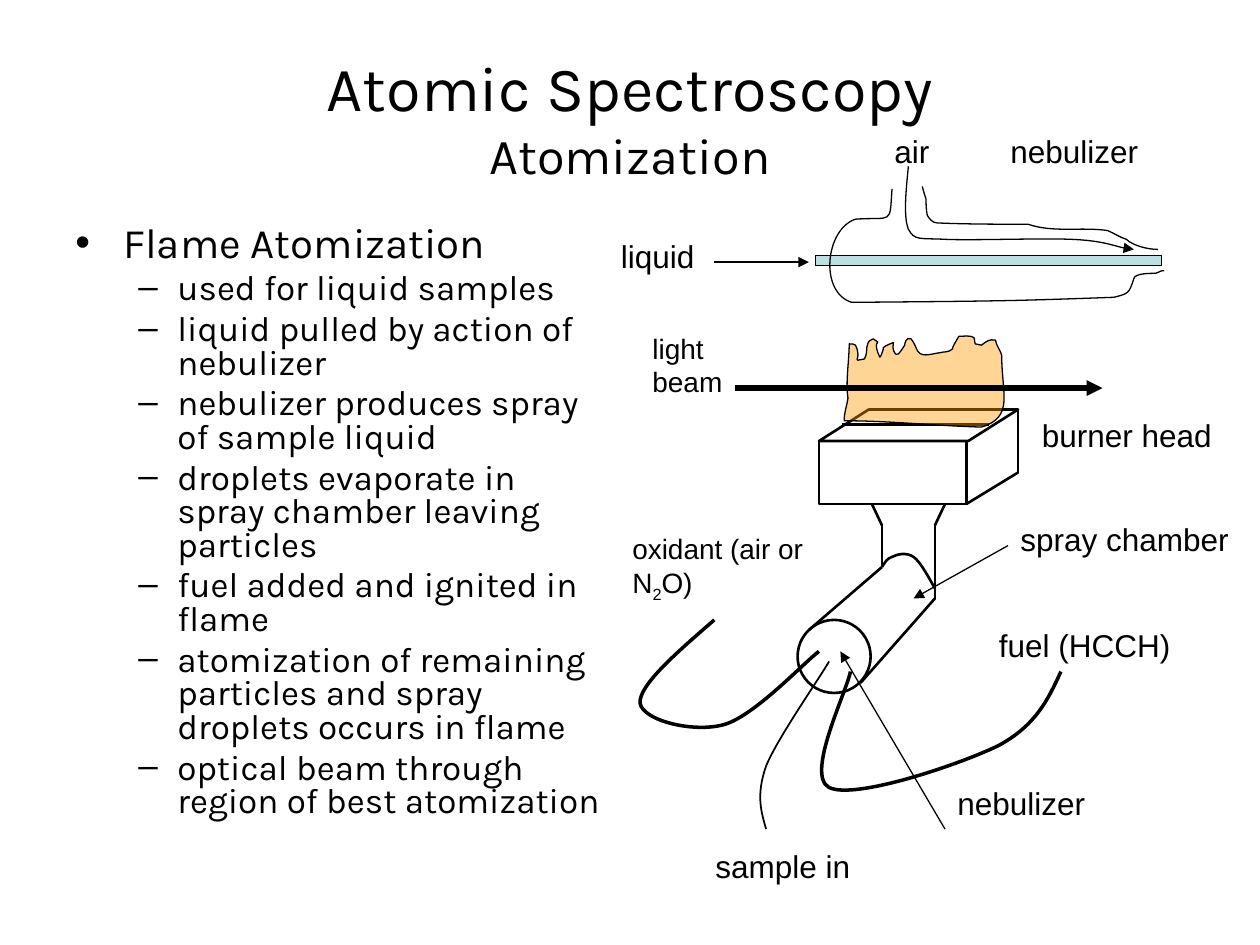
from dataclasses import dataclass

from lxml import etree
from pptx import Presentation
from pptx import util as u
from pptx.dml.color import RGBColor
from pptx.enum import shapes, text
from pptx.oxml.ns import qn


@dataclass(frozen=True)
class Theme:
    ink: RGBColor = RGBColor(0, 0, 0)
    liquid: RGBColor = RGBColor(0xBB, 0xE0, 0xE3)
    flame: RGBColor = RGBColor(0xFF, 0x99, 0x00)
    flame_alpha: int = 41
    heading_font: str = "Karla"
    label_font: str = "Arial"
    title: float = 36
    subtitle: float = 28.8
    bullet: float = 24
    sub_bullet: float = 20
    label: float = 18
    small_label: float = 16
    thin: float = 0.75
    outline: float = 1.5
    hose: float = 2
    beam: float = 3


@dataclass(frozen=True)
class Label:
    words: str
    x: float
    y: float
    w: float
    h: float = 0.4
    size: float = Theme.label


@dataclass(frozen=True)
class Line:
    x1: float
    y1: float
    x2: float
    y2: float
    width: float = Theme.outline
    arrow: bool = False


@dataclass(frozen=True)
class Curve:
    """Bezier chain: a start point, then three points per segment."""
    points: list
    width: float = Theme.thin
    arrow: bool = False
    closed: bool = False


T = Theme()
RECT = shapes.MSO_SHAPE.RECTANGLE


def cm(inches: float) -> u.Length:
    """Diagram units are inches; lengths are handed over as centimetres."""
    return u.Cm(inches * 2.54)


def box(*values: float) -> list:
    return [cm(v) for v in values]


def add_run(p, words: str, size: float, font: str):
    r = p.add_run()
    r.text = words
    r.font.size, r.font.name = u.Pt(size), font
    r.font.color.rgb = T.ink
    return r


def style_line(sp, width: float, arrow: bool = False) -> None:
    sp.line.color.rgb = T.ink
    sp.line.width = u.Pt(width)
    if arrow:
        ln = sp._element.spPr.find(qn("a:ln"))
        etree.SubElement(ln, qn("a:tailEnd"), type="triangle")


def add_line(s, line: Line) -> None:
    sp = s.shapes.add_connector(shapes.MSO_CONNECTOR.STRAIGHT,
                                *box(line.x1, line.y1, line.x2, line.y2))
    style_line(sp, line.width, line.arrow)
    etree.SubElement(sp._element.spPr, qn("a:effectLst"))


def add_solid(s, kind, at: tuple, width: float = T.outline, fill=None):
    sp = s.shapes.add_shape(kind, *box(*at))
    sp.shadow.inherit = False
    if fill is None:
        sp.fill.background()
    else:
        sp.fill.solid()
        sp.fill.fore_color.rgb = fill
    style_line(sp, width)
    return sp


def add_curve(s, curve: Curve):
    start, *rest = [tuple(box(*pt)) for pt in curve.points]
    builder = s.shapes.build_freeform(*start)
    builder.add_line_segments(rest, close=curve.closed)
    sp = builder.convert_to_shape()
    sp.shadow.inherit = False
    sp.fill.background()
    style_line(sp, curve.width, curve.arrow)
    # Turn each three straight steps into one Bezier segment
    steps = list(sp._element.iter(qn("a:lnTo")))
    for i in range(0, len(steps), 3):
        bezier = etree.Element(qn("a:cubicBezTo"))
        steps[i].addprevious(bezier)
        for step in steps[i:i + 3]:
            bezier.append(step[0])
            step.getparent().remove(step)
    return sp


def add_text_box(s, at: tuple):
    tf = s.shapes.add_textbox(*box(*at)).text_frame
    tf.word_wrap = True
    return tf


def add_label(s, label: Label):
    p = add_text_box(s, (label.x, label.y, label.w, label.h)).paragraphs[0]
    add_run(p, label.words, label.size, T.label_font)
    return p


def add_bullet(p, words: str, level: int) -> None:
    size = (T.bullet, T.sub_bullet)[level]
    left, hang = ((0.38, 0.38), (0.81, 0.31))[level]
    p.level, p.line_spacing, p.space_before = level, 0.8, u.Pt(size * 0.2)
    pPr = p._p.get_or_add_pPr()
    pPr.set("marL", str(cm(left)))
    pPr.set("indent", str(-cm(hang)))
    etree.SubElement(pPr, qn("a:buFont"), typeface=T.label_font)
    etree.SubElement(pPr, qn("a:buChar"), char="•–"[level])
    add_run(p, words, size, T.heading_font)


STEPS = ["used for liquid samples",
         "liquid pulled by action of nebulizer",
         "nebulizer produces spray of sample liquid",
         "droplets evaporate in spray chamber leaving particles",
         "fuel added and ignited in flame",
         "atomization of remaining particles and spray droplets occurs in flame",
         "optical beam through region of best atomization"]

BURNER_LINES = [Line(8.08, 3.25, 8.08, 3.75), Line(8.08, 3.75, 7.67, 4),
                Line(6.68, 3.37, 7.85, 3.37),  # slot
                Line(6.92, 4, 7, 4.17), Line(7.5, 4, 7.42, 4.17),
                Line(7, 4.17, 7, 4.5), Line(7.42, 4.17, 7.42, 4.75),
                Line(7, 4.5, 6.42, 5), Line(7.42, 4.75, 6.83, 5.42)]

ARROWS = [Line(8, 4.33, 7.25, 4.75, T.thin, True),
          Line(7.5, 6.58, 6.67, 5.17, T.thin, True),
          Line(5.83, 3.08, 8.75, 3.08, T.beam, True),
          Line(5.67, 2.08, 6.42, 2.08, T.thin, True)]

CHAMBER_TOP = Curve([(7, 4.5), (7.02, 4.47), (7.04, 4.43), (7.08, 4.42), (7.12, 4.4),
                     (7.19, 4.38), (7.25, 4.42), (7.31, 4.46), (7.39, 4.62), (7.42, 4.67)],
                    T.outline)
SAMPLE_TUBE = Curve([(6.08, 6.58), (6.04, 6.44), (6, 6.31), (6.08, 6.08),
                     (6.17, 5.86), (6.5, 5.39), (6.58, 5.25)], 1)
FUEL_HOSE = Curve([(8.42, 5.33), (8.32, 5.55), (8.22, 5.76), (7.92, 5.92), (7.61, 6.07),
                   (6.78, 6.35), (6.58, 6.25), (6.39, 6.15), (6.72, 5.49), (6.75, 5.33)], T.hose)
OXIDANT_HOSE = Curve([(5.67, 4.92), (5.37, 5.18), (5.07, 5.44), (5.08, 5.58), (5.1, 5.72),
                      (5.51, 5.82), (5.75, 5.75), (5.99, 5.68), (6.38, 5.26), (6.5, 5.17)], T.hose)
FLAME = Curve([
    (6.7, 3.34), (6.7, 3.27), (6.72, 3.23), (6.73, 3.16), (6.71, 3.03), (6.74, 2.86), (6.74, 2.73),
    (6.76, 2.73), (6.78, 2.73), (6.79, 2.74), (6.85, 2.87), (6.74, 2.87), (6.86, 2.85),
    (6.9, 2.78), (6.85, 2.72), (6.93, 2.69), (7.02, 2.75), (6.91, 2.67), (6.98, 2.83),
    (6.98, 2.85), (7, 2.81), (7, 2.8), (7.01, 2.79), (7.01, 2.77), (7.01, 2.76),
    (7.03, 2.74), (7.09, 2.72), (7.09, 2.72), (7.09, 2.74), (7.08, 2.77), (7.1, 2.8),
    (7.1, 2.81), (7.12, 2.82), (7.13, 2.81), (7.15, 2.79), (7.18, 2.74), (7.18, 2.74),
    (7.18, 2.73), (7.19, 2.67), (7.23, 2.69), (7.25, 2.71), (7.27, 2.76), (7.27, 2.76),
    (7.3, 2.85), (7.38, 2.81), (7.46, 2.8), (7.49, 2.79), (7.53, 2.8), (7.56, 2.77),
    (7.56, 2.77), (7.56, 2.75), (7.57, 2.74), (7.58, 2.72), (7.61, 2.67), (7.61, 2.67),
    (7.65, 2.67), (7.7, 2.66), (7.73, 2.68), (7.74, 2.69), (7.73, 2.72), (7.74, 2.73),
    (7.76, 2.74), (7.77, 2.74), (7.79, 2.74), (7.83, 2.71), (7.85, 2.69), (7.9, 2.7),
    (7.91, 2.75), (7.94, 2.78), (7.95, 2.82), (7.95, 3.13), (8.05, 3.31), (7.79, 3.39),
    (7.42, 3.38), (7.06, 3.34), (6.7, 3.34)], closed=True)
NEBULIZER = [
    Curve([(7.32, 1.48), (7.33, 1.52), (7.34, 1.55), (7.35, 1.58), (7.35, 1.62), (7.35, 1.66),
           (7.36, 1.71), (7.38, 1.74), (7.4, 1.77), (7.44, 1.77), (7.68, 1.78), (7.92, 1.78),
           (8.16, 1.78), (8.36, 1.85), (8.58, 1.8), (8.79, 1.83), (8.84, 1.85), (8.88, 1.88),
           (8.94, 1.9), (8.99, 1.95), (9.11, 1.98), (9.19, 1.98)]),
    Curve([(7.08, 1.5), (7.06, 1.79), (7.09, 1.72), (6.79, 1.74), (6.55, 1.82), (6.5, 2.32),
           (6.76, 2.4), (7.92, 2.39), (8.01, 2.39), (8.84, 2.36), (8.96, 2.33), (8.96, 2.33),
           (9, 2.21), (9.01, 2.17), (9.12, 2.17), (9.17, 2.17), (9.23, 2.15), (9.2, 2.15),
           (9.24, 2.15)]),
    Curve([(7.21, 1.32), (7.19, 1.52), (7.17, 1.72), (7.21, 1.82), (7.26, 1.91), (7.29, 1.89),
           (7.5, 1.9), (7.71, 1.91), (8.25, 1.89), (8.5, 1.9), (8.75, 1.91), (8.92, 1.98),
           (9, 1.98)], arrow=True)]

LABELS = [Label("sample in", 5.58, 6.67, 1.5), Label("fuel (HCCH)", 7.83, 4.92, 1.83),
          Label("burner head", 8.17, 3.25, 1.75), Label("spray chamber", 8, 4.08, 1.92),
          Label("nebulizer", 7.5, 6.17, 2.33), Label("nebulizer", 7.92, 1, 2.08),
          Label("air", 7, 1, 0.5), Label("liquid", 4.83, 1.83, 1.42),
          Label("light beam", 5.08, 2.58, 1.17, 0.64, T.small_label)]


def main() -> None:
    prs = Presentation()
    prs.slide_width, prs.slide_height = box(10, 7.5)
    s = prs.slides.add_slide(prs.slide_layouts[5])

    # Title
    title = s.shapes.title
    title.left, title.top, title.width, title.height = box(0.5, 0.3, 9, 1.25)
    tf = title.text_frame
    tf.auto_size, tf.vertical_anchor = text.MSO_AUTO_SIZE.NONE, text.MSO_ANCHOR.MIDDLE
    p = tf.paragraphs[0]
    p.alignment = text.PP_ALIGN.CENTER
    add_run(p, "Atomic Spectroscopy", T.title, T.heading_font)
    p.add_line_break()
    add_run(p, "Atomization", T.subtitle, T.heading_font)

    # Bullets
    tf = add_text_box(s, (0.5, 1.75, 4.37, 4.95))
    add_bullet(tf.paragraphs[0], "Flame Atomization", 0)
    for step in STEPS:
        add_bullet(tf.add_paragraph(), step, 1)

    # Burner and spray chamber
    add_solid(s, RECT, (6.47, 2.03, 2.75, 0.08), T.thin, T.liquid)
    top = add_solid(s, shapes.MSO_SHAPE.PARALLELOGRAM, (6.5, 3.25, 1.58, 0.25))
    top.adjustments[0] = 1.58
    add_solid(s, RECT, (6.5, 3.5, 1.17, 0.5))
    for line in BURNER_LINES:
        add_line(s, line)
    add_solid(s, shapes.MSO_SHAPE.OVAL, (6.33, 4.92, 0.58, 0.58))
    for curve in (CHAMBER_TOP, SAMPLE_TUBE, FUEL_HOSE, OXIDANT_HOSE):
        add_curve(s, curve)

    # Translucent flame
    flame = add_curve(s, FLAME)
    flame.fill.solid()
    flame.fill.fore_color.rgb = T.flame
    color = flame._element.spPr.find(qn("a:solidFill"))[0]
    etree.SubElement(color, qn("a:alpha"), val=str(T.flame_alpha * 1000))

    # Nebulizer, arrows and labels
    for curve in NEBULIZER:
        add_curve(s, curve)
    for line in ARROWS:
        add_line(s, line)
    for label in LABELS:
        add_label(s, label)
    p = add_label(s, Label("oxidant (air or N", 4.92, 4.17, 2.08, 0.64, T.small_label))
    r = add_run(p, "2", T.small_label, T.label_font)
    r.font._element.set("baseline", "-25000")
    add_run(p, "O)", T.small_label, T.label_font)

    prs.save("out.pptx")


if __name__ == "__main__":
    main()
